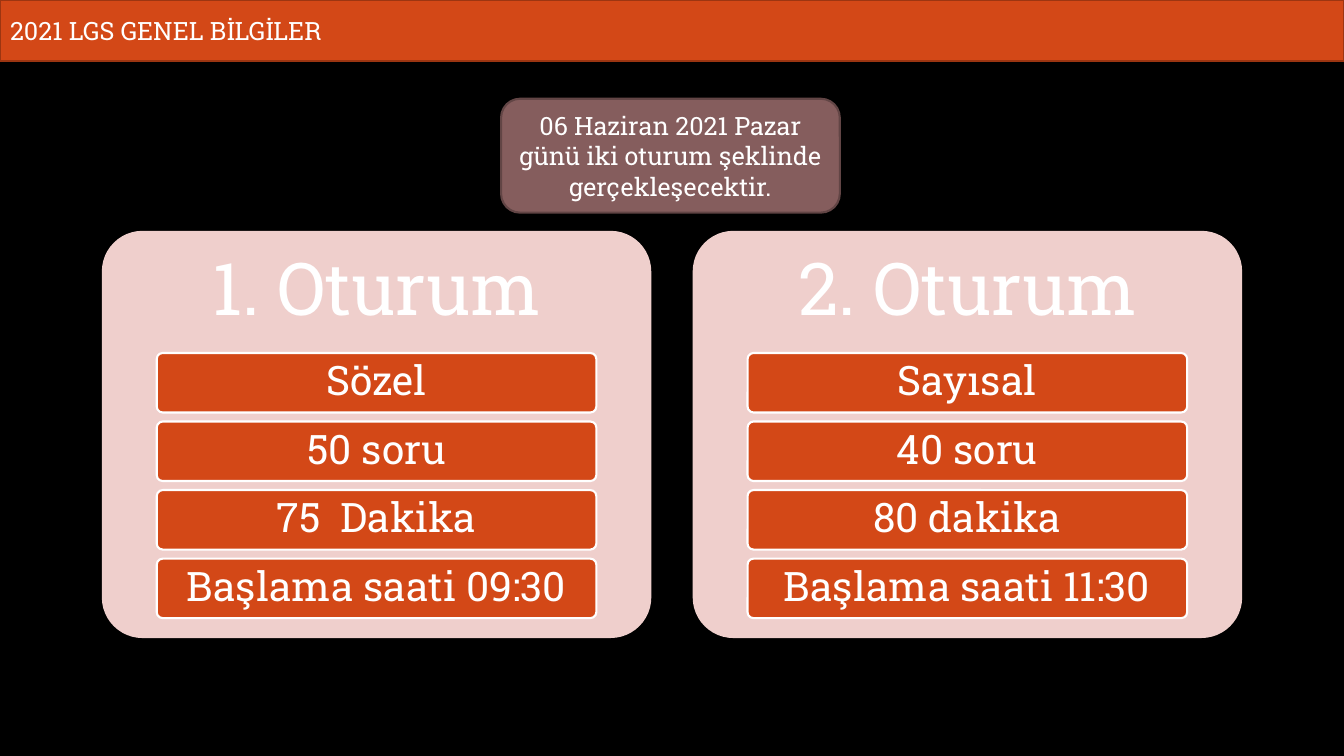
"""Build the slide on the two sessions of the 2021 LGS exam."""
import pptx
import pptx.util
import pptx.dml.color
import pptx.enum.shapes
import pptx.enum.text

Inches = pptx.util.Inches
ALIGN = pptx.enum.text.PP_ALIGN
ROUNDED = pptx.enum.shapes.MSO_SHAPE.ROUNDED_RECTANGLE
COLOURS = {
    "background": "000000",
    "text": "FFFFFF",
    "orange": "D34817",
    "dark orange": "9C3511",
    "pink": "EFCFCC",
    "mauve": "855D5D",
    "dark mauve": "624545",
}
COLOURS = {name: pptx.dml.color.RGBColor.from_string(value) for name, value in COLOURS.items()}


def paint(shape, fill, line=None):
    shape.fill.solid()
    shape.fill.fore_color.rgb = COLOURS[fill]
    if line:
        shape.line.color.rgb = COLOURS[line]
        shape.line.width = pptx.util.Pt(1.5)
    else:
        shape.line.fill.background()


def write(shape, text, size, alignment=ALIGN.CENTER, spacing=1.0, margins=(0.1, 0.05)):
    frame = shape.text_frame
    frame.text = text
    horizontal, vertical = map(Inches, margins)
    frame_format = {
        "word_wrap": True,
        "auto_size": pptx.enum.text.MSO_AUTO_SIZE.NONE,
        "vertical_anchor": pptx.enum.text.MSO_ANCHOR.MIDDLE,
        "margin_left": horizontal,
        "margin_right": horizontal,
        "margin_top": vertical,
        "margin_bottom": vertical,
    }
    for name, value in frame_format.items():
        setattr(frame, name, value)
    paragraph = frame.paragraphs[0]
    paragraph.alignment = alignment
    paragraph.line_spacing = spacing
    font = paragraph.runs[0].font
    for name, value in {"name": "Roboto Slab", "size": pptx.util.Pt(size)}.items():
        setattr(font, name, value)
    font.color.rgb = COLOURS["text"]


presentation = pptx.Presentation()
presentation.slide_width = Inches(13.33)
presentation.slide_height = Inches(7.5)
slide = presentation.slides.add_slide(presentation.slide_layouts[5])
slide.background.fill.solid()
slide.background.fill.fore_color.rgb = COLOURS["background"]

title = slide.shapes.title
title_place = {"left": 0, "top": 0, "width": presentation.slide_width, "height": Inches(0.61)}
for name, value in title_place.items():
    setattr(title, name, value)
paint(title, "orange", "dark orange")
write(title, "2021 LGS GENEL BİLGİLER", 18, ALIGN.LEFT)

sessions = {
    "1. Oturum": ["Sözel", "50 soru", "75  Dakika", "Başlama saati 09:30"],
    "2. Oturum": ["Sayısal", "40 soru", "80 dakika", "Başlama saati 11:30"],
}
panel_left, panel_top, panel_width, panel_height = 1.01, 2.29, 5.45, 4.04
panel_step = 5.86
heading_height = 0.3 * panel_height
row_width, row_height, row_step = 0.8 * panel_width, 0.59, 0.68

for column, (heading, facts) in enumerate(sessions.items()):
    left = panel_left + column * panel_step
    panel = slide.shapes.add_shape(
        ROUNDED, Inches(left), Inches(panel_top), Inches(panel_width), Inches(panel_height))
    panel.shadow.inherit = False
    panel.adjustments[0] = 0.1
    paint(panel, "pink")
    heading_box = slide.shapes.add_textbox(
        Inches(left), Inches(panel_top), Inches(panel_width), Inches(heading_height))
    write(heading_box, heading, 52, spacing=0.9, margins=(0.22, 0.22))

    row_left = left + (panel_width - row_width) / 2
    for row, fact in enumerate(facts):
        row_top = panel_top + heading_height + row * row_step
        fact_box = slide.shapes.add_shape(
            ROUNDED, Inches(row_left), Inches(row_top), Inches(row_width), Inches(row_height))
        fact_box.shadow.inherit = False
        fact_box.adjustments[0] = 0.1
        paint(fact_box, "orange", "text")
        write(fact_box, fact, 29, spacing=0.9, margins=(0.08, 0.06))

date_box = slide.shapes.add_shape(ROUNDED, Inches(4.97), Inches(0.98), Inches(3.36), Inches(1.13))
date_box.shadow.inherit = False
paint(date_box, "mauve", "dark mauve")
write(date_box, "06 Haziran 2021 Pazar günü iki oturum şeklinde gerçekleşecektir.", 18)

presentation.save("out.pptx")
